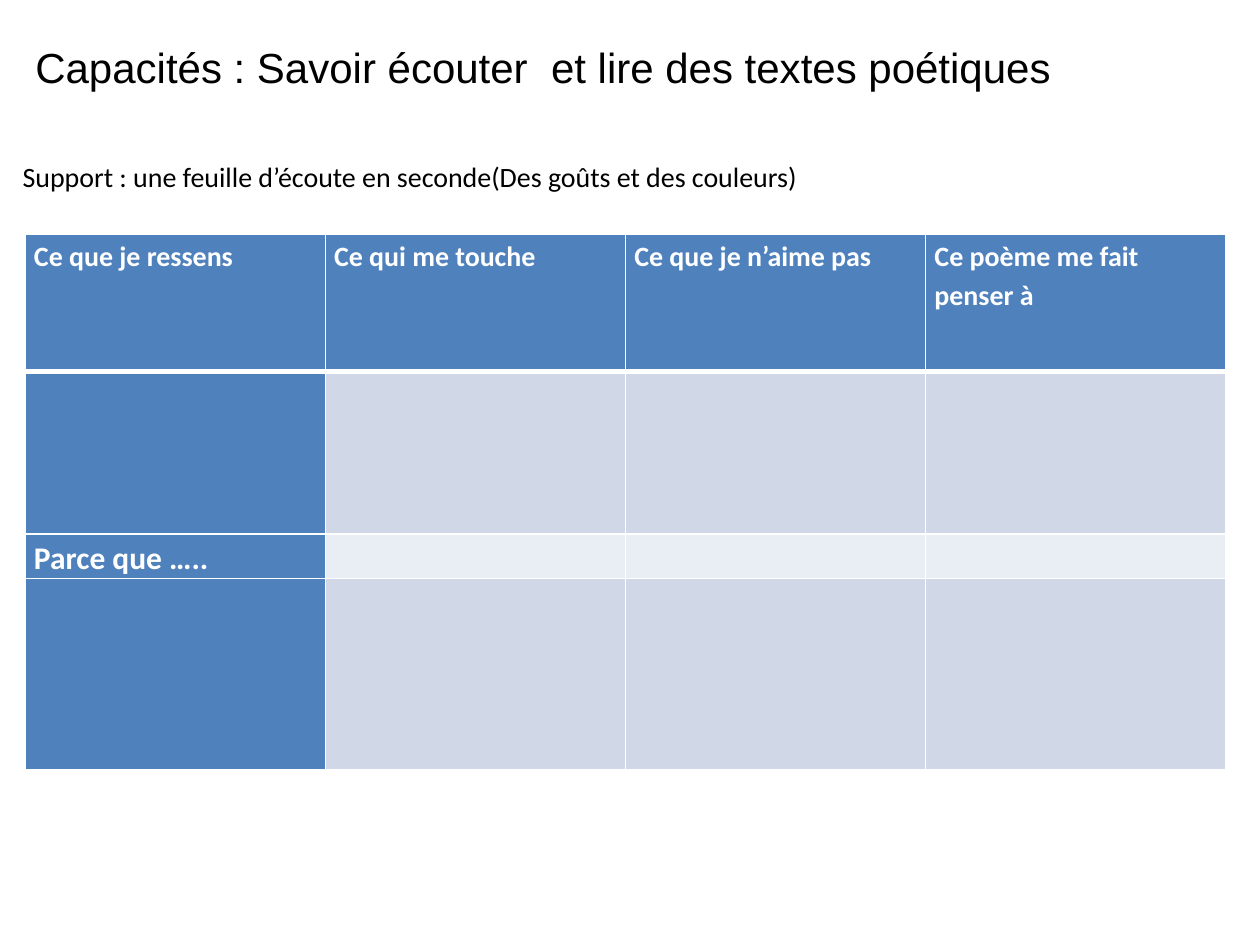
from dataclasses import dataclass

from lxml.etree import SubElement
from pptx import Presentation
from pptx.dml.color import RGBColor
from pptx.enum.text import MSO_ANCHOR, MSO_AUTO_SIZE, PP_ALIGN
from pptx.oxml.ns import qn
from pptx.util import Inches, Pt


@dataclass(frozen=True)
class Theme:
    """Colours, fonts and type sizes of the slide."""
    ink: str = "000000"
    white: str = "FFFFFF"
    blue: str = "4F81BD"
    band: str = "D0D8E8"
    pale: str = "E9EDF4"
    title_font: str = "Arial"
    body_font: str = "Calibri"
    title: int = 24
    body: int = 16
    label: int = 18
    thin: int = 1
    thick: int = 3


@dataclass(frozen=True)
class Row:
    """One table row: height in inches, texts, fills and type size."""
    height: float
    texts: tuple[str, ...]
    head_fill: str
    fill: str
    size: int


T = Theme()
BLANK = ("",) * 4
ROWS = (
    Row(1.09, ("Ce que je ressens", "Ce qui me touche", "Ce que je n’aime pas",
               "Ce poème me fait penser à"), T.blue, T.blue, T.body),
    Row(1.29, BLANK, T.blue, T.band, T.body),
    Row(0.35, ("Parce que …..", "", "", ""), T.blue, T.pale, T.label),
    Row(1.52, BLANK, T.blue, T.band, T.body),
)


def set_all(obj, values: dict) -> None:
    """Set every attribute of obj named in values."""
    for name, value in values.items():
        setattr(obj, name, value)


def write(tf, text: str, font: str, size: int, color: str, bold: bool = False,
          align=PP_ALIGN.LEFT, spacing: float = 1.0) -> None:
    """Write one formatted paragraph into a text frame."""
    p = tf.paragraphs[0]
    set_all(p, {"alignment": align, "line_spacing": spacing})
    set_all(p.font, {"size": Pt(size), "name": font})
    if text:
        r = p.add_run()
        r.text = text
        set_all(r.font, {"name": font, "size": Pt(size), "bold": bold})
        r.font.color.rgb = RGBColor.from_string(color)


def place(sp, left: float, top: float, width: float, height: float) -> None:
    """Position a text shape and format its frame."""
    set_all(sp, {"left": Inches(left), "top": Inches(top),
                 "width": Inches(width), "height": Inches(height)})
    set_all(sp.text_frame, {"word_wrap": True, "auto_size": MSO_AUTO_SIZE.NONE,
                            "vertical_anchor": MSO_ANCHOR.MIDDLE,
                            "margin_left": 0, "margin_right": 0,
                            "margin_top": 0, "margin_bottom": 0})


def add_borders(cell, widths: dict[str, int]) -> None:
    """Draw white borders of the given point widths."""
    tcPr = cell._tc.get_or_add_tcPr()
    for side, width in widths.items():
        ln = SubElement(tcPr, qn(f"a:ln{side}"), w=str(Pt(width)))
        fill = SubElement(ln, qn("a:solidFill"))
        SubElement(fill, qn("a:srgbClr"), val=T.white)


def add_grid(s, rows: tuple[Row, ...]) -> None:
    """Add the listening sheet table."""
    count = len(rows[0].texts)
    height = sum(row.height for row in rows)
    table = s.shapes.add_table(len(rows), count, Inches(0.2), Inches(1.86),
                               Inches(9.53), Inches(height)).table
    for i, row in enumerate(rows):
        table.rows[i].height = Inches(row.height)
        for j, text in enumerate(row.texts):
            cell = table.cell(i, j)
            set_all(cell, {"margin_left": Inches(0.07), "margin_right": Inches(0.07),
                           "margin_top": 0, "margin_bottom": 0})
            add_borders(cell, {"L": T.thin, "R": T.thin,
                               "T": T.thick if i == 1 else T.thin,
                               "B": T.thick if i == 0 else T.thin})
            cell.fill.solid()
            color = row.fill if j else row.head_fill
            cell.fill.fore_color.rgb = RGBColor.from_string(color)
            write(cell.text_frame, text, T.body_font, row.size, T.white,
                  bold=True, spacing=1.15)


def main() -> None:
    """Build and save the slide."""
    prs = Presentation()
    set_all(prs, {"slide_width": Inches(10), "slide_height": Inches(7.5)})
    s = prs.slides.add_slide(prs.slide_layouts[5])
    add_grid(s, ROWS)
    title = s.shapes.title
    place(title, 0, 0.25, 8.62, 0.56)
    write(title.text_frame, "Capacités : Savoir écouter  et lire des textes poétiques",
          T.title_font, T.title, T.ink, align=PP_ALIGN.CENTER)
    sp = s.shapes.add_textbox(0, 0, 0, 0)
    place(sp, 0.18, 1.2, 8.6, 0.4)
    write(sp.text_frame, "Support : une feuille d’écoute en seconde(Des goûts et des couleurs)",
          T.body_font, T.body, T.ink)
    prs.save("out.pptx")


if __name__ == "__main__":
    main()
